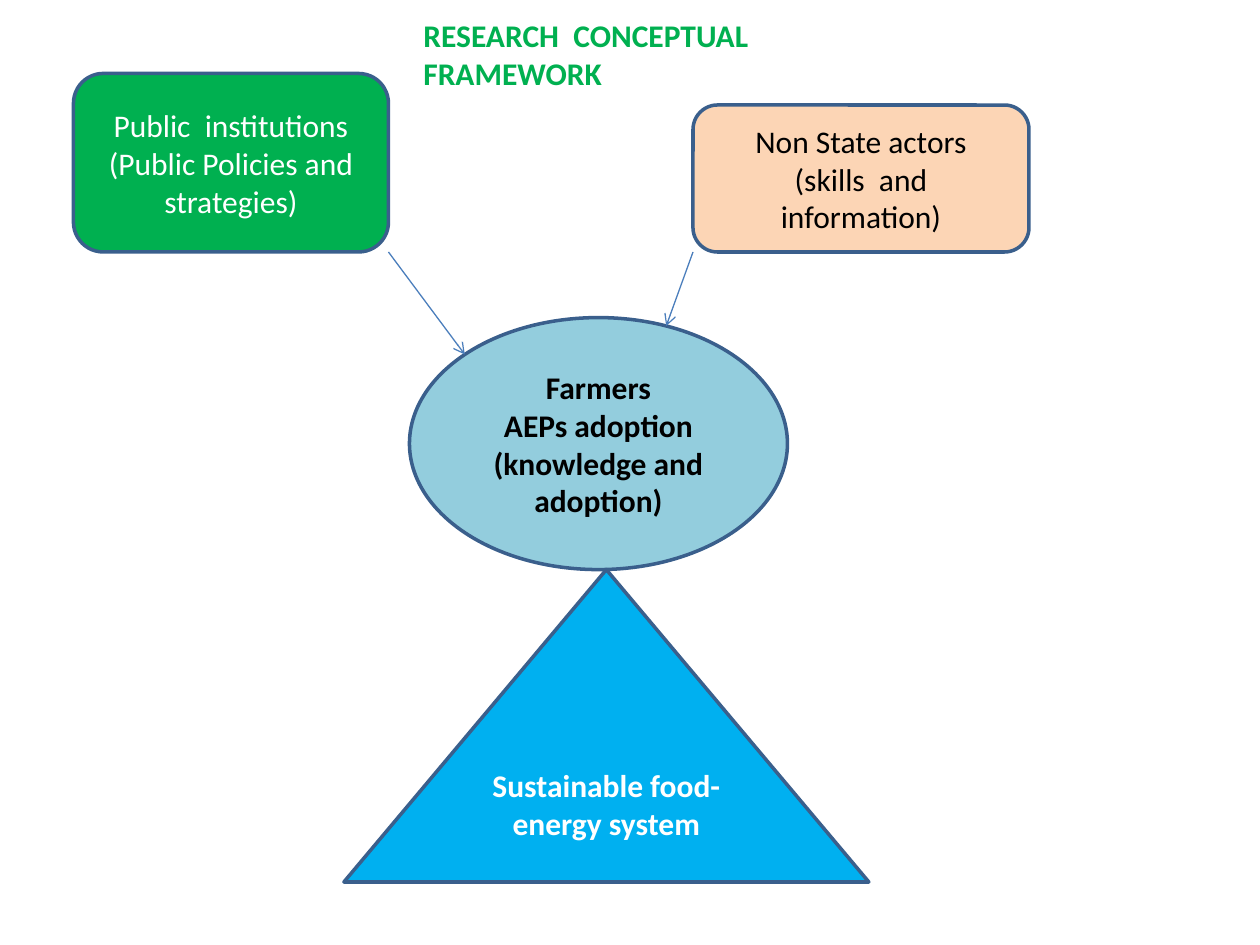
import math
import pptx
import pptx.dml.color
import pptx.enum.shapes
import pptx.enum.text
import pptx.oxml
import pptx.util

Pt = pptx.util.Pt
SHAPE = pptx.enum.shapes.MSO_SHAPE
ALIGN = pptx.enum.text.PP_ALIGN
ANCHOR = pptx.enum.text.MSO_ANCHOR

TITLE_BOX = (234.72, 5.76, 275.76, 51.12)
PUBLIC_BOX = (42, 42, 180, 102)
NON_STATE_BOX = (396, 60, 192, 84)
FARMERS_BOX = (234, 181.5, 216, 144)
SYSTEM_BOX = (196.5, 325.5, 300, 178.5)


def color(value):
    return pptx.dml.color.RGBColor.from_string(value)


def write_text(frame, paragraphs, tint, bold=False, align=ALIGN.CENTER, anchor=ANCHOR.MIDDLE):
    frame.word_wrap = True
    frame.vertical_anchor = anchor
    for index, text in enumerate(paragraphs):
        para = frame.add_paragraph() if index else frame.paragraphs[0]
        para.alignment = align
        span = para.add_run()
        span.text = text
        span.font.name = "Calibri"
        span.font.size = Pt(18)
        span.font.bold = bold
        span.font.color.rgb = color(tint)


def place_title(page, box, text):
    title = page.shapes.title
    title.left, title.top, title.width, title.height = map(Pt, box)
    title.text_frame.auto_size = pptx.enum.text.MSO_AUTO_SIZE.NONE
    write_text(title.text_frame, [text], "00B050", bold=True,
               align=ALIGN.LEFT, anchor=ANCHOR.TOP)


def add_node(page, kind, box, fill, paragraphs, tint, bold=False):
    node = page.shapes.add_shape(kind, *map(Pt, box))
    node.shadow.inherit = False
    node.fill.solid()
    node.fill.fore_color.rgb = color(fill)
    node.line.color.rgb = color("3A5F8C")
    node.line.width = Pt(2)
    write_text(node.text_frame, paragraphs, tint, bold)


def ellipse_point(box, degrees):
    left, top, width, height = box
    angle = math.radians(degrees)
    return (left + width / 2 * (1 + math.cos(angle)),
            top + height / 2 * (1 - math.sin(angle)))


def add_arrow(page, start, end):
    arrow = page.shapes.add_connector(
        pptx.enum.shapes.MSO_CONNECTOR.STRAIGHT, *map(Pt, start + end))
    arrow.line.color.rgb = color("4B7EBC")
    arrow.line.width = Pt(0.75)
    namespace = pptx.oxml.ns.nsdecls("a")
    arrow.line._get_or_add_ln().append(
        pptx.oxml.parse_xml(f'<a:tailEnd {namespace} type="arrow"/>'))
    arrow._element.spPr.append(pptx.oxml.parse_xml(f"<a:effectLst {namespace}/>"))


def build_framework(page):
    place_title(page, TITLE_BOX, "RESEARCH  CONCEPTUAL FRAMEWORK")
    add_node(page, SHAPE.OVAL, FARMERS_BOX, "93CDDD",
             ["Farmers", "AEPs adoption (knowledge and adoption)"], "000000", bold=True)
    add_node(page, SHAPE.ROUNDED_RECTANGLE, PUBLIC_BOX, "00B050",
             ["Public  institutions", "(Public Policies and strategies)"], "FFFFFF")
    add_node(page, SHAPE.ROUNDED_RECTANGLE, NON_STATE_BOX, "FCD5B5",
             ["Non State actors", "(skills  and information)"], "000000")
    left, top, width, height = PUBLIC_BOX
    add_arrow(page, (left + width, top + height), ellipse_point(FARMERS_BOX, 135))
    left, top, width, height = NON_STATE_BOX
    add_arrow(page, (left, top + height), ellipse_point(FARMERS_BOX, 69))
    add_node(page, SHAPE.ISOSCELES_TRIANGLE, SYSTEM_BOX, "00B0F0",
             ["Sustainable food-energy system"], "FFFFFF", bold=True)


def main():
    deck = pptx.Presentation()
    deck.slide_width, deck.slide_height = Pt(720), Pt(540)
    page = deck.slides.add_slide(deck.slide_layouts.get_by_name("Title Only"))
    build_framework(page)
    deck.save("out.pptx")


if __name__ == "__main__":
    main()
